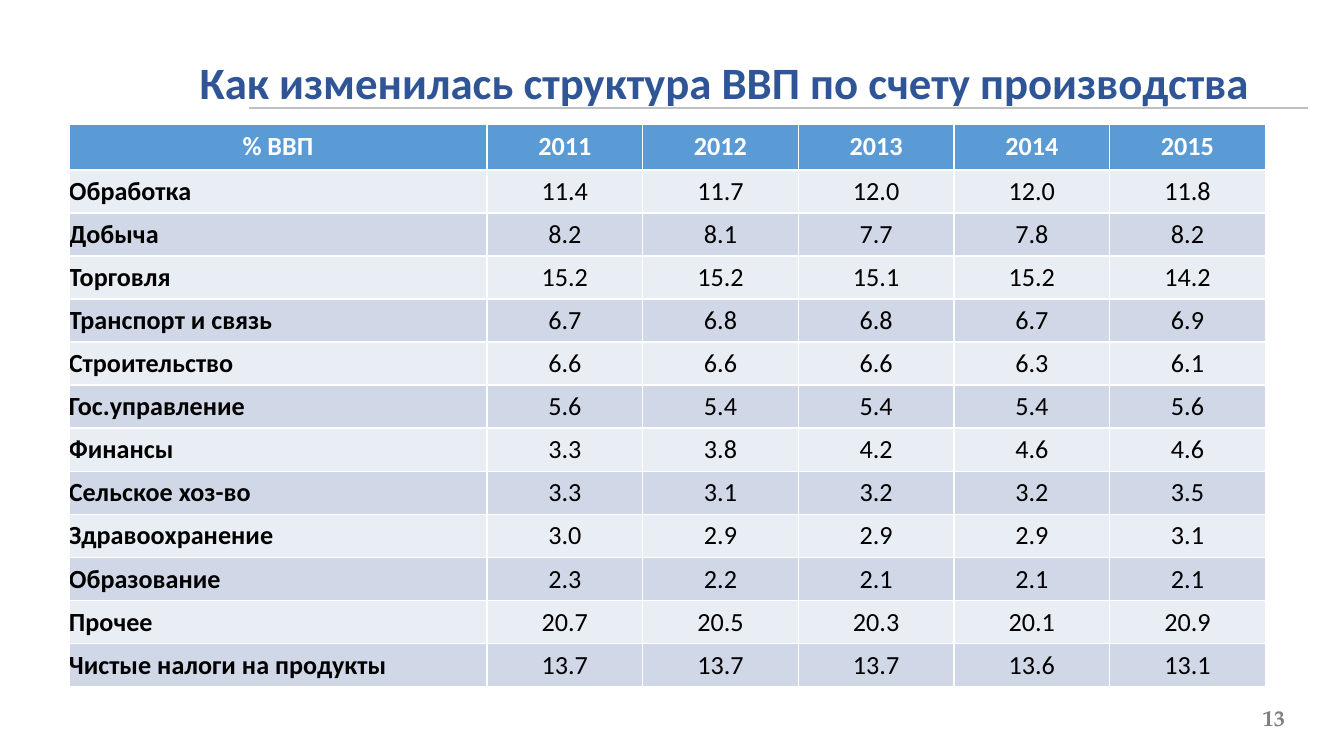
from lxml import etree
from pptx import Presentation
from pptx.dml.color import RGBColor
from pptx.enum import shapes, text
from pptx.oxml import ns
from pptx.util import Pt

# Content
TITLE = "Как изменилась структура ВВП по счету производства"
PAGE = "13"
HEAD = ["% ВВП", "2011", "2012", "2013", "2014", "2015"]
ROWS = [
    ("Обработка", 11.4, 11.7, 12.0, 12.0, 11.8),
    ("Добыча", 8.2, 8.1, 7.7, 7.8, 8.2),
    ("Торговля", 15.2, 15.2, 15.1, 15.2, 14.2),
    ("Транспорт и связь", 6.7, 6.8, 6.8, 6.7, 6.9),
    ("Строительство", 6.6, 6.6, 6.6, 6.3, 6.1),
    ("Гос.управление", 5.6, 5.4, 5.4, 5.4, 5.6),
    ("Финансы", 3.3, 3.8, 4.2, 4.6, 4.6),
    ("Сельское хоз-во", 3.3, 3.1, 3.2, 3.2, 3.5),
    ("Здравоохранение", 3.0, 2.9, 2.9, 2.9, 3.1),
    ("Образование", 2.3, 2.2, 2.1, 2.1, 2.1),
    ("Прочее", 20.7, 20.5, 20.3, 20.1, 20.9),
    ("Чистые налоги на продукты", 13.7, 13.7, 13.7, 13.6, 13.1),
]
BANDS = ["E9EDF4", "D0D8E8"]

# Table sizes in points
LEFT, TOP = 36.9, 66.3
NAME_W, YEAR_W = 224, 83.4
HEAD_H, ROW_H = 24.7, 23.08

ALIGN = text.PP_ALIGN


def paint(target, color):
    target.solid()
    target.fore_color.rgb = RGBColor.from_string(color)


def style(para, size, color, bold=True, align=ALIGN.CENTER, face="Calibri"):
    para.alignment = align
    for run in para.runs:
        font = run.font
        font.name, font.size, font.bold = face, Pt(size), bold
        font.color.rgb = RGBColor.from_string(color)


def edge(cell, color="FFFFFF", width=1):
    props = cell._tc.get_or_add_tcPr()
    for side in ("lnL", "lnR", "lnT", "lnB"):
        line = etree.SubElement(props, ns.qn("a:" + side), w=str(Pt(width)))
        fill = etree.SubElement(line, ns.qn("a:solidFill"))
        etree.SubElement(fill, ns.qn("a:srgbClr"), val=color)


def no_inset(box):
    box.margin_left = box.margin_right = box.margin_top = box.margin_bottom = 0
    box.vertical_anchor = text.MSO_ANCHOR.MIDDLE


def main():
    deck = Presentation()
    deck.slide_width, deck.slide_height = Pt(720), Pt(405)
    slide = deck.slides.add_slide(deck.slide_layouts[5])

    # Rule under the title
    rule = slide.shapes.add_connector(
        shapes.MSO_CONNECTOR.STRAIGHT, Pt(133.5), Pt(57.7), Pt(700.5), Pt(57.7))
    paint(rule.line.fill, "BFBFBF")
    rule.line.width = Pt(1)
    etree.SubElement(rule._element.spPr, ns.qn("a:effectLst"))

    # Page number
    num = slide.shapes.add_textbox(Pt(653.8), Pt(380.9), Pt(34.6), Pt(7.2))
    no_inset(num.text_frame)
    num.text_frame.text = PAGE
    style(num.text_frame.paragraphs[0], 12, "7F7F7F", align=ALIGN.RIGHT,
          face="TeX Gyre Pagella")

    # Title, with a first-line indent
    title = slide.shapes.title
    title.left, title.top = Pt(58.3), Pt(25.9)
    title.width, title.height = Pt(623.5), Pt(36.4)
    frame = title.text_frame
    frame.text = TITLE
    frame.word_wrap = True
    frame.auto_size = text.MSO_AUTO_SIZE.NONE
    frame.vertical_anchor = text.MSO_ANCHOR.TOP
    para = frame.paragraphs[0]
    para._p.get_or_add_pPr().set("indent", str(Pt(36)))
    style(para, 24, "2F5597")

    # Table
    years = len(HEAD) - 1
    table = slide.shapes.add_table(
        len(ROWS) + 1, len(HEAD), Pt(LEFT), Pt(TOP),
        Pt(NAME_W + years * YEAR_W), Pt(HEAD_H + len(ROWS) * ROW_H)).table
    for c, col in enumerate(table.columns):
        col.width = Pt(YEAR_W if c else NAME_W)
    for r, values in enumerate([HEAD] + ROWS):
        table.rows[r].height = Pt(ROW_H if r else HEAD_H)
        for c, value in enumerate(values):
            cell = table.cell(r, c)
            no_inset(cell)
            edge(cell)
            paint(cell.fill, BANDS[(r - 1) % 2] if r else "5B9BD5")
            cell.text_frame.text = str(value)
            style(cell.text_frame.paragraphs[0], 14,
                  "000000" if r else "FFFFFF", bold=r == 0 or c == 0,
                  align=ALIGN.LEFT if r and c == 0 else ALIGN.CENTER)

    deck.save("out.pptx")


if __name__ == "__main__":
    main()
